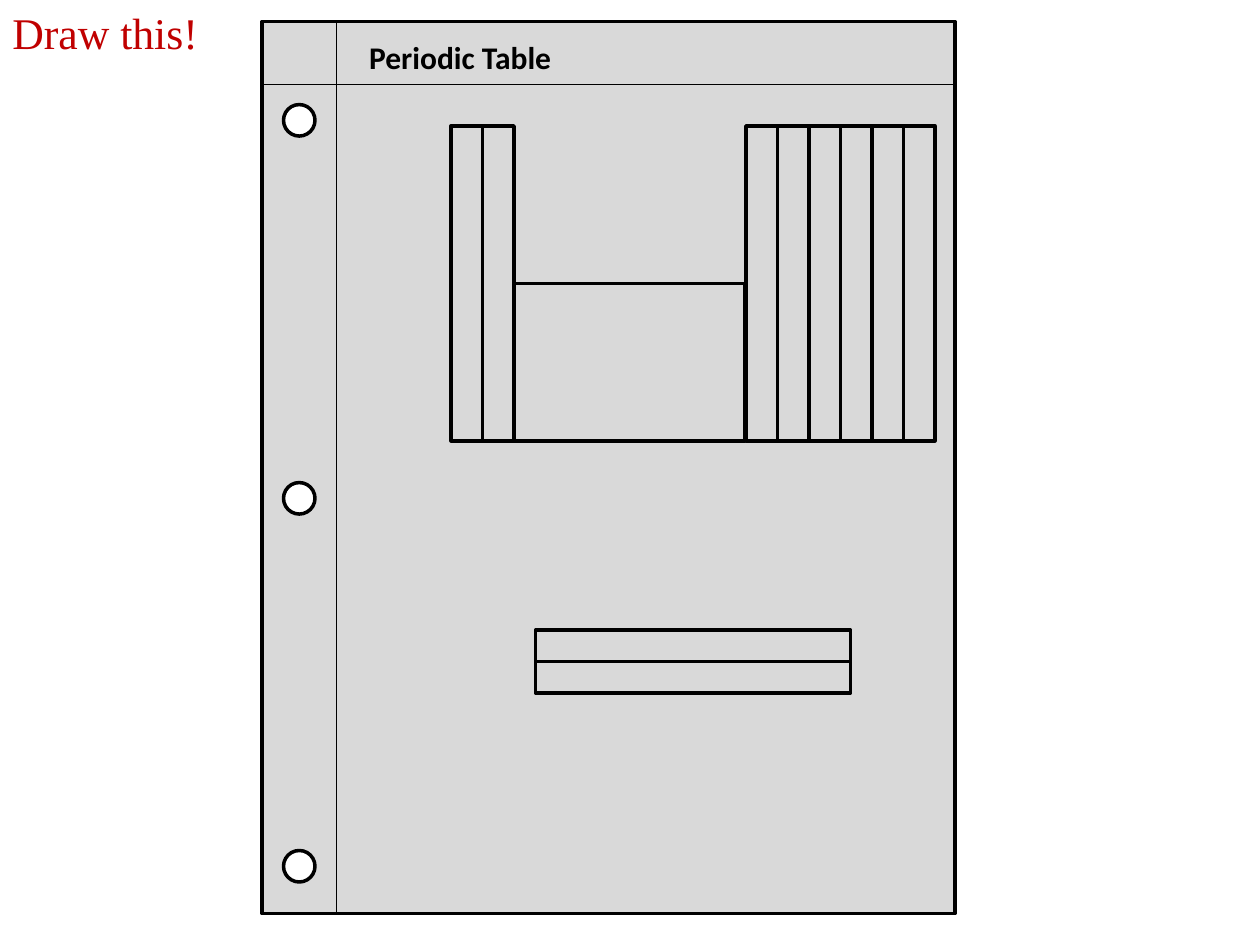
from lxml.etree import SubElement
from pptx import Presentation
from pptx.dml.color import RGBColor
from pptx.enum.shapes import MSO_CONNECTOR, MSO_SHAPE
from pptx.enum.text import MSO_ANCHOR, MSO_AUTO_SIZE, PP_ALIGN
from pptx.oxml.ns import qn
from pptx.util import Inches, Pt

COLORS = {"paper": "D9D9D9", "ink": "000000", "hole": "FFFFFF", "prompt": "C00000"}

# Content
TITLE = "Periodic Table"
PROMPT = "Draw this!"

# Notebook sheet, in inches
SHEET_LEFT, SHEET_TOP, SHEET_WIDTH, SHEET_HEIGHT = 2.08, 0.17, 5.5, 7.08
SHEET_RIGHT, SHEET_BOTTOM = SHEET_LEFT + SHEET_WIDTH, SHEET_TOP + SHEET_HEIGHT
MARGIN_X, HEADER_Y = 2.67, 0.67
HOLE_LEFT, HOLE_TOPS = 2.25, (0.83, 3.83, 6.75)

# Blocks of the periodic table: left, top, cell width, cell height, columns, rows
CELL = 0.25
BLOCKS = {
    "s block": (3.58, 1, CELL, 2.5, 2, 1),
    "p block": (5.92, 1, CELL, 2.5, 6, 1),
    "f block": (4.25, 5, 2.5, CELL, 1, 2),
    "d block": (4.08, 2.25, 1.83, 1.25, 1, 1),
}


def color(name):
    return RGBColor.from_string(COLORS[name])


def add_outline(slide, kind, left, top, width, height, fill=None):
    shape = slide.shapes.add_shape(
        kind, Inches(left), Inches(top), Inches(width), Inches(height))
    shape.shadow.inherit = False
    if fill:
        shape.fill.solid()
        shape.fill.fore_color.rgb = color(fill)
    else:
        shape.fill.background()
    shape.line.color.rgb = color("ink")
    shape.line.width = Pt(2)


def add_rule(slide, x1, y1, x2, y2):
    rule = slide.shapes.add_connector(
        MSO_CONNECTOR.STRAIGHT, Inches(x1), Inches(y1), Inches(x2), Inches(y2))
    rule.line.color.rgb = color("ink")
    rule.line.width = Pt(0.75)
    SubElement(rule._element.spPr, qn("a:effectLst"))


def write_text(shape, text, box, size, font, ink, bold=False):
    shape.left, shape.top, shape.width, shape.height = map(Inches, box)
    frame = shape.text_frame
    frame.text = text
    frame.word_wrap = True
    frame.auto_size = MSO_AUTO_SIZE.SHAPE_TO_FIT_TEXT
    frame.vertical_anchor = MSO_ANCHOR.TOP
    paragraph = frame.paragraphs[0]
    paragraph.alignment = PP_ALIGN.LEFT
    run_font = paragraph.runs[0].font
    run_font.size, run_font.name, run_font.bold = Pt(size), font, bold
    run_font.color.rgb = color(ink)


def main():
    presentation = Presentation()
    presentation.slide_width, presentation.slide_height = Inches(10), Inches(7.5)
    slide = presentation.slides.add_slide(presentation.slide_layouts[5])

    # Sheet with its margin, header rule and punched holes
    add_outline(slide, MSO_SHAPE.RECTANGLE, SHEET_LEFT, SHEET_TOP,
                SHEET_WIDTH, SHEET_HEIGHT, "paper")
    add_rule(slide, MARGIN_X, SHEET_TOP, MARGIN_X, SHEET_BOTTOM)
    add_rule(slide, SHEET_LEFT, HEADER_Y, SHEET_RIGHT, HEADER_Y)
    for top in HOLE_TOPS:
        add_outline(slide, MSO_SHAPE.OVAL, HOLE_LEFT, top, CELL, CELL, "hole")

    # Table blocks
    for left, top, width, height, columns, rows in BLOCKS.values():
        for row in range(rows):
            for column in range(columns):
                add_outline(slide, MSO_SHAPE.RECTANGLE, left + column * width,
                            top + row * height, width, height)

    # Title, brought in front of the sheet, and prompt
    title = slide.shapes.title
    slide.shapes._spTree.append(title._element)
    write_text(title, TITLE, (2.83, 0.25, 2.83, 0.4), 18, "Calibri", "ink", bold=True)
    prompt = slide.shapes.add_textbox(0, 0, 0, 0)
    write_text(prompt, PROMPT, (0, 0, 1.75, 0.52), 25, "Times New Roman", "prompt")

    presentation.save("out.pptx")


if __name__ == "__main__":
    main()
